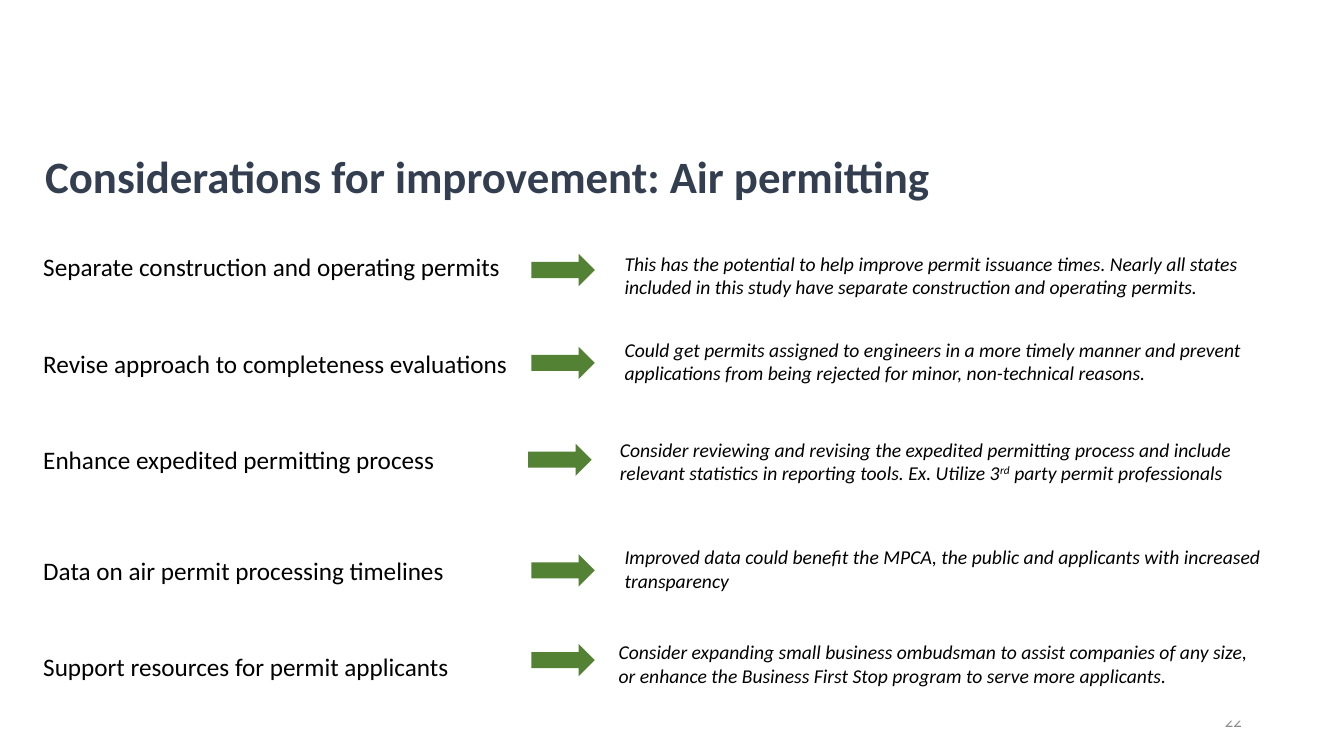
"""Build the slide on considerations for improving air permitting."""
from pptx import Presentation, util as u
from pptx.dml.color import RGBColor
from pptx.enum import shapes, text

deck = Presentation()
deck.slide_width, deck.slide_height = u.Cm(33.87), u.Cm(19.05)
slide = deck.slides.add_slide(deck.slide_layouts[6])


def add_text(box, lines, look, color, gaps=(0,), **form):
    frame = slide.shapes.add_textbox(*map(u.Cm, box)).text_frame
    frame.word_wrap = True
    for name, val in look.items():
        setattr(frame, name, val)
    for i, line in enumerate(lines):
        para = frame.paragraphs[0] if i == 0 else frame.add_paragraph()
        para.space_before = u.Pt(gaps[i])
        for name, val in form.items():
            setattr(para, name, val)
        for j, part in enumerate(line.split("^")):
            run = para.add_run()
            run.text = part
            font = {"name": "Calibri", "size": u.Pt(sizes[color]),
                    "bold": color == NAVY, "italic": look is NOTE}
            if look is LABEL:
                font["size"] = u.Pt(18)
            for name, val in font.items():
                setattr(run.font, name, val)
            run.font.color.rgb = RGBColor.from_string(color)
            if j % 2:
                run.font._element.set("baseline", "30000")


def add_block(kind, box, color):
    shape = slide.shapes.add_shape(kind, *map(u.Cm, box))
    shape.shadow.inherit = False
    shape.fill.solid()
    shape.fill.fore_color.rgb = RGBColor.from_string(color)
    shape.line.fill.background()


NAVY, GREY, BLACK, GREEN, WHITE = "333F50", "8C8C8C", "000000", "548235", "FFFFFF"
sizes = {NAVY: 32, GREY: 12, BLACK: 14}
MID = {"vertical_anchor": text.MSO_ANCHOR.MIDDLE}
LABEL = {"vertical_anchor": text.MSO_ANCHOR.TOP}
NOTE = {"auto_size": text.MSO_AUTO_SIZE.SHAPE_TO_FIT_TEXT}

rows = [
    ("Separate construction and operating permits", 0, 13.39, 6.4, 15.49, 6.22,
     "This has the potential to help improve permit issuance times. Nearly all states "
     "included in this study have separate construction and operating permits."),
    ("Revise approach to completeness evaluations", 49.5, 13.39, 8.74, 15.49, 8.38,
     "Could get permits assigned to engineers in a more timely manner and prevent "
     "applications from being rejected for minor, non-technical reasons."),
    ("Enhance expedited permitting process", 49.5, 13.31, 11.18, 15.37, 10.9,
     "Consider reviewing and revising the expedited permitting process and include "
     "relevant statistics in reporting tools. Ex. Utilize 3^rd^ party permit professionals"),
    ("Data on air permit processing timelines", 59.5, 13.39, 13.97, 15.49, 13.61,
     "Improved data could benefit the MPCA, the public and applicants with increased "
     "transparency"),
    ("Support resources for permit applicants", 49.5, 13.39, 16.23, 15.34, 16,
     "Consider expanding small business ombudsman to assist companies of any size, "
     "or enhance the Business First Stop program to serve more applicants."),
]

add_text((0.89, 3.53, 29.21, 1.96), ["Considerations for improvement: Air permitting"],
         MID, NAVY, line_spacing=0.9)
add_text((23.93, 17.65, 7.62, 1.02), ["22"], MID, GREY, alignment=text.PP_ALIGN.RIGHT)
add_text((0.84, 6.3, 13.06, 11.86), [row[0] for row in rows], LABEL, BLACK,
         [row[1] for row in rows], line_spacing=0.9)
add_block(shapes.MSO_SHAPE.RECTANGLE, (29.67, 14.38, 4.22, 3.78), WHITE)

for label, gap, left, top, x, y, note in rows:
    add_block(shapes.MSO_SHAPE.RIGHT_ARROW, (left, top, 1.6, 0.81), GREEN)
    add_text((x, y, 16.64, 1.45), [note], NOTE, BLACK)

deck.save("out.pptx")
